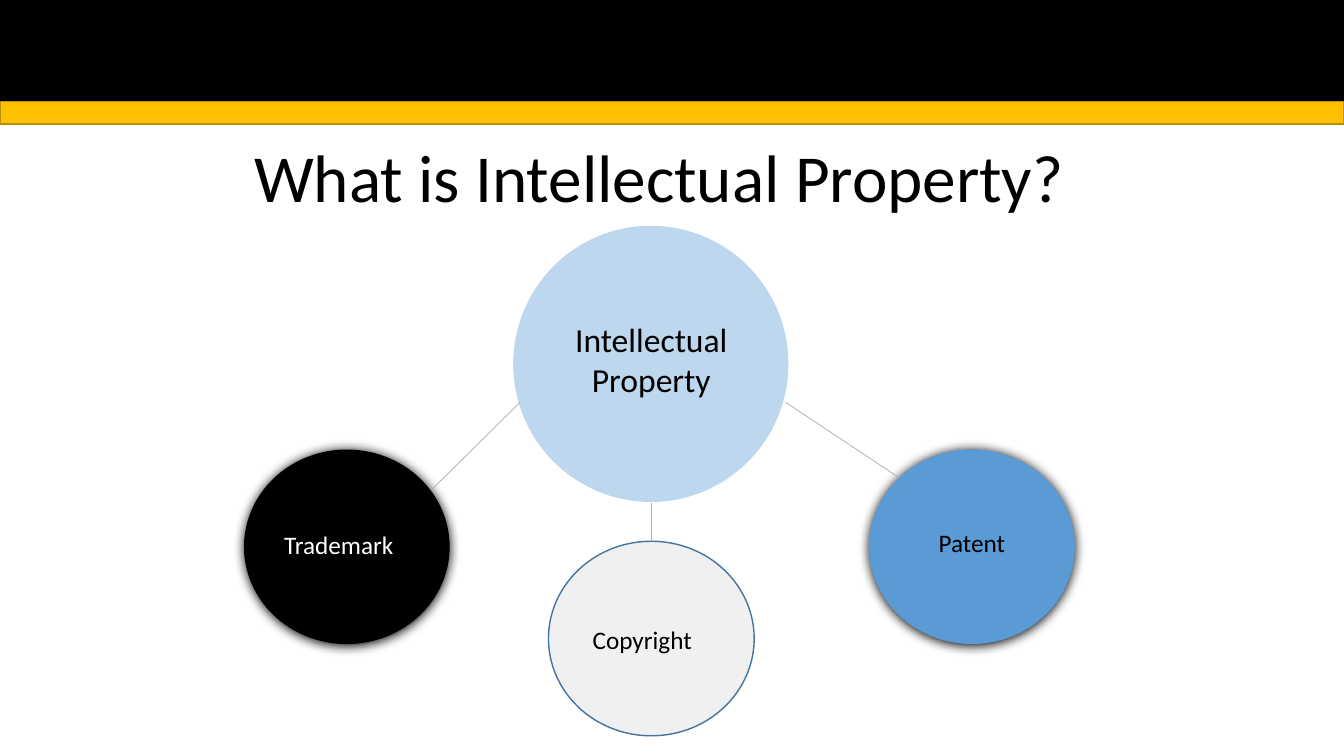
from lxml import etree
from pptx import Presentation
from pptx.dml.color import RGBColor
from pptx.enum.shapes import MSO_CONNECTOR, MSO_SHAPE
from pptx.enum.text import MSO_ANCHOR, PP_ALIGN
from pptx.oxml.ns import qn
from pptx.util import Inches, Pt

RECT, OVAL = MSO_SHAPE.RECTANGLE, MSO_SHAPE.OVAL
STRAIGHT = MSO_CONNECTOR.STRAIGHT
LEFT, CENTER = PP_ALIGN.LEFT, PP_ALIGN.CENTER
MIDDLE = MSO_ANCHOR.MIDDLE
FONT = "Calibri"
COLORS = {
    "black": "000000", "white": "FFFFFF", "gold": "FFC000", "gold_edge": "BD8E00",
    "hub": "BDD7EE", "blue": "5B9BD5", "blue_edge": "43739E",
    "pale": "F1F0F0", "line": "AFABAB",
}
CELL = 0.1
COLS, ROWS = 133.3, 75
CIRCLE_W, CIRCLE_H = 20.4, 19.3
BRANCHES = [
    ("Trademark", 0, 22.2, "black", None, "white", (3, 7.4, 14.5), LEFT),
    ("Copyright", 30.2, 31.3, "pale", "blue_edge", "black", (3.4, 7.7, 13.5), LEFT),
    ("Patent", 62, 22.2, "blue", None, "black", (4.4, 7.2, 11.6), CENTER),
]
SPOKES = {
    "Trademark": (27.4, 17.5, 18.7, 26.1),
    "Copyright": (40.4, 27.5, 40.4, 31.3),
    "Patent": (53.7, 17.5, 65, 25),
}


def grid(*cells):
    return [Inches(c * CELL) for c in cells]


def rgb(name):
    return RGBColor.from_string(COLORS[name])


def add_filled(s, kind, box, fill, edge=None):
    sp = s.shapes.add_shape(kind, *grid(*box))
    sp.shadow.inherit = False
    sp.fill.solid()
    sp.fill.fore_color.rgb = rgb(fill)
    if edge:
        sp.line.color.rgb = rgb(edge)
        sp.line.width = Pt(1)
    else:
        sp.line.fill.background()
    return sp


def add_shadow(sp):
    effects = sp._element.spPr.find(qn("a:effectLst"))
    shadow = etree.SubElement(effects, qn("a:outerShdw"), blurRad=str(Pt(8.5)),
                              dist=str(Pt(1)), dir="5400000", rotWithShape="0")
    etree.SubElement(shadow, qn("a:srgbClr"), val=COLORS["black"])


def write(tf, text, size, color, align):
    tf.word_wrap = True
    tf.text = text
    p = tf.paragraphs[0]
    p.alignment = align
    r = p.runs[0]
    r.font.name = FONT
    r.font.size = Pt(size)
    r.font.color.rgb = rgb(color)


def add_label(s, box, text, size, color, align):
    sp = s.shapes.add_textbox(*grid(*box))
    write(sp.text_frame, text, size, color, align)


def add_spoke(s, x, y, ends):
    x1, y1, x2, y2 = ends
    line = s.shapes.add_connector(STRAIGHT, *grid(x + x1, y + y1, x + x2, y + y2))
    line.line.color.rgb = rgb("line")
    line.line.width = Pt(0.5)
    etree.SubElement(line._element.spPr, qn("a:effectLst"))
    return line


def add_header(s, x, y, w, h):
    black_h = h * 0.82
    add_filled(s, RECT, (x, y, w, black_h), "black", "black")
    add_filled(s, RECT, (x, y + black_h, w, h - black_h), "gold", "gold_edge")


def add_title(s, *box):
    title = s.shapes.title
    title.left, title.top, title.width, title.height = grid(*box)
    tf = title.text_frame
    write(tf, "What is Intellectual Property?", 48, "black", CENTER)
    tf.vertical_anchor = MIDDLE
    tf.paragraphs[0].line_spacing = 0.9
    s.shapes._spTree.append(title._element)


def add_diagram(s, x, y):
    hub_x = x + 26.7
    add_filled(s, OVAL, (hub_x, y, 27.3, 27.4), "hub")
    add_label(s, (hub_x + 3.5, y + 8.7, 20.4, 9.1), "Intellectual Property", 24, "black", CENTER)
    for name, dx, dy, fill, edge, ink, (lx, ly, lw), align in BRANCHES:
        left, top = x + dx, y + dy
        circle = add_filled(s, OVAL, (left, top, CIRCLE_W, CIRCLE_H), fill, edge)
        if not edge:
            add_shadow(circle)
        add_label(s, (left + lx, top + ly, lw, 4), name, 18, ink, align)
        spoke = add_spoke(s, x, y, SPOKES[name])
        if name == "Copyright":
            spoke.end_connect(circle, 0)


def main():
    prs = Presentation()
    prs.slide_width, prs.slide_height = grid(COLS, ROWS)
    s = prs.slides.add_slide(prs.slide_layouts[5])
    add_header(s, 0, 0, COLS, 12.3)
    add_title(s, 7.9, 10.7, 115, 14.5)
    add_diagram(s, 24.2, 22.4)
    prs.save("out.pptx")


if __name__ == "__main__":
    main()
